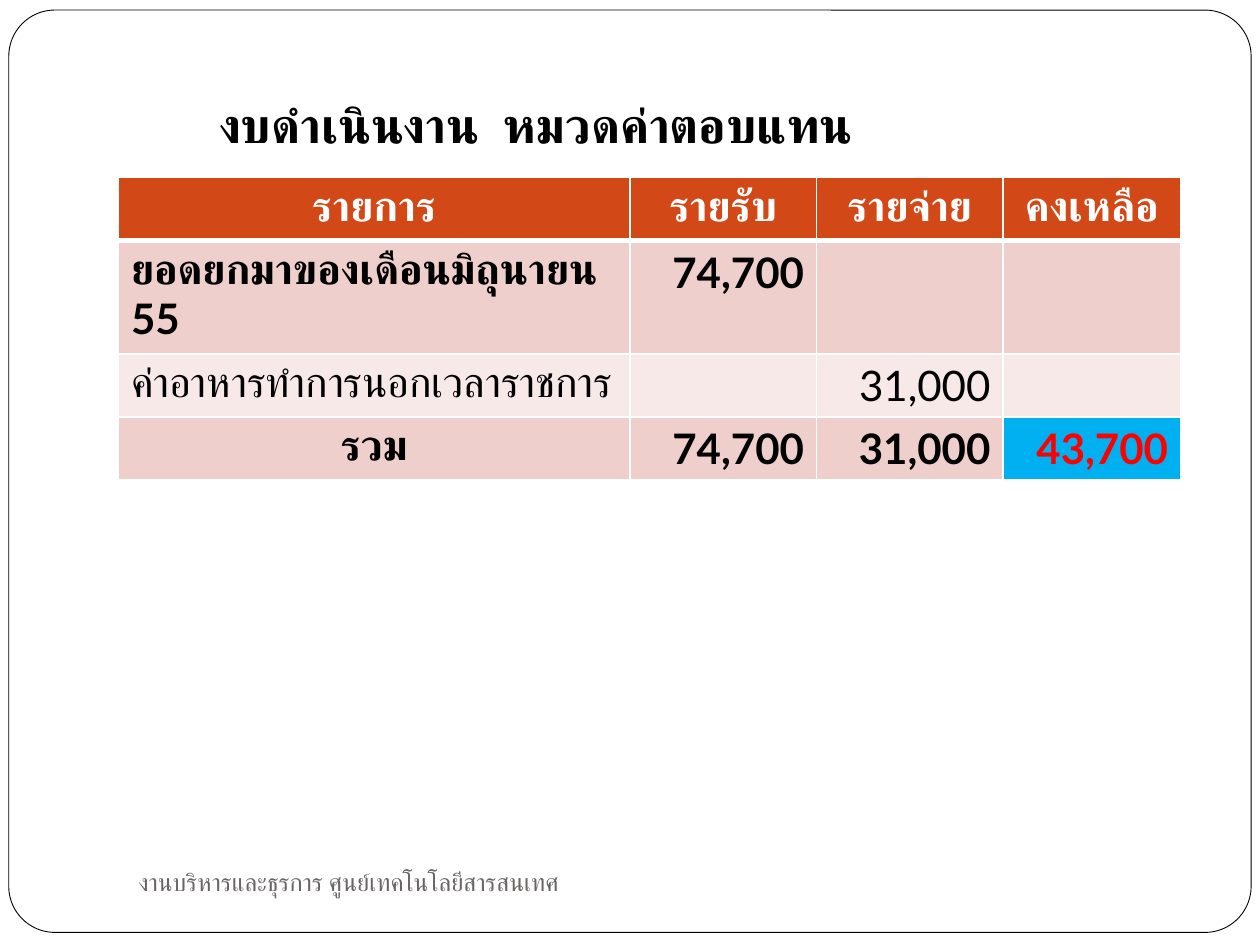
import pptx
import pptx.dml.color
import pptx.enum.shapes
import pptx.enum.text
import pptx.oxml
import pptx.oxml.ns
import pptx.util

COLORS = {
    "white": "FFFFFF", "black": "000000", "footer": "696464",
    "header": "D34817", "band": "EFCFCC", "light": "F7E9E8",
    "balance": "00B0F0", "red": "FF0000",
}
ALIGNMENTS = {
    "left": pptx.enum.text.PP_ALIGN.LEFT,
    "center": pptx.enum.text.PP_ALIGN.CENTER,
    "right": pptx.enum.text.PP_ALIGN.RIGHT,
}
THAI_FONT = "Times New Roman"


def rgb(name):
    return pptx.dml.color.RGBColor.from_string(COLORS[name])


def write_text(text_frame, text, size=24, font="Lato", color="black",
               bold=False, align="left"):
    paragraph = text_frame.paragraphs[0]
    paragraph.alignment = ALIGNMENTS[align]
    run = paragraph.add_run()
    run.text = text
    run.font.size = pptx.util.Pt(size)
    run.font.name = font
    run.font.bold = bold
    run.font.color.rgb = rgb(color)
    # Thai letters take the complex-script font
    complex_font = pptx.oxml.parse_xml(
        f'<a:cs {pptx.oxml.ns.nsdecls("a")} typeface="{THAI_FONT}"/>')
    run.font._element.append(complex_font)


class BudgetSlide:
    """Places elements on a grid of 100 columns by 75 rows."""

    def __init__(self, presentation):
        self.column = presentation.slide_width / 100
        self.row = presentation.slide_height / 75
        self.slide = presentation.slides.add_slide(presentation.slide_layouts[6])

    def columns(self, count):
        return pptx.util.Emu(round(count * self.column))

    def rows(self, count):
        return pptx.util.Emu(round(count * self.row))

    def place(self, left, top, width, height):
        return (self.columns(left), self.rows(top),
                self.columns(width), self.rows(height))

    def frame(self, *area):
        shape = self.slide.shapes.add_shape(
            pptx.enum.shapes.MSO_SHAPE.ROUNDED_RECTANGLE, *self.place(*area))
        shape.adjustments[0] = 0.05
        shape.shadow.inherit = False
        shape.fill.solid()
        shape.fill.fore_color.rgb = rgb("white")
        shape.line.color.rgb = rgb("black")
        shape.line.width = pptx.util.Pt(0.5)

    def text(self, text, *area, middle=False, **style):
        text_frame = self.slide.shapes.add_textbox(*self.place(*area)).text_frame
        text_frame.word_wrap = True
        if middle:
            text_frame.vertical_anchor = pptx.enum.text.MSO_ANCHOR.MIDDLE
        write_text(text_frame, text, **style)

    def table(self, left, top, widths, heights, content):
        area = self.place(left, top, sum(widths), sum(heights))
        table = self.slide.shapes.add_table(len(heights), len(widths), *area).table
        for column, width in zip(table.columns, widths):
            column.width = self.columns(width)
        for row, height in zip(table.rows, heights):
            row.height = self.rows(height)
        for row_index, (fill, style, texts) in enumerate(content):
            for column_index, text in enumerate(texts):
                cell = table.cell(row_index, column_index)
                self.cell(cell, text, fill, row_index, column_index, style)
        return table

    def cell(self, cell, text, fill, row_index, column_index, style):
        # The line under the header is thicker
        self.borders(cell, top=3 if row_index == 1 else 1,
                     bottom=3 if row_index == 0 else 1)
        self.fill_cell(cell, fill)
        if text:
            default = "right" if column_index else "left"
            if row_index == 0 or text == "รวม":
                default = "center"
            write_text(cell.text_frame, text, align=default,
                       **(TOTAL if text == "43,700" else style))

    def fill_cell(self, cell, color):
        cell.fill.solid()
        cell.fill.fore_color.rgb = rgb(color)

    def borders(self, cell, top, bottom):
        properties = cell._tc.get_or_add_tcPr()
        for side, width in (("L", 1), ("R", 1), ("T", top), ("B", bottom)):
            properties.append(pptx.oxml.parse_xml(
                f'<a:ln{side} {pptx.oxml.ns.nsdecls("a")} w="{pptx.util.Pt(width)}">'
                f'<a:solidFill><a:srgbClr val="{COLORS["white"]}"/></a:solidFill>'
                f'</a:ln{side}>'))


HEADER = {"color": "white", "bold": True}
STRONG = {"bold": True}
TOTAL = {"color": "red", "bold": True}
BUDGET = [
    ("header", HEADER, ["รายการ", "รายรับ", "รายจ่าย", "คงเหลือ"]),
    ("band", STRONG, ["ยอดยกมาของเดือนมิถุนายน 55", "74,700", "", ""]),
    ("light", {}, ["ค่าอาหารทำการนอกเวลาราชการ", "", "31,000", ""]),
    ("band", STRONG, ["รวม", "74,700", "31,000", "43,700"]),
]


def main():
    presentation = pptx.Presentation()
    presentation.slide_width = pptx.util.Inches(10)
    presentation.slide_height = pptx.util.Inches(7.5)
    budget = BudgetSlide(presentation)

    # Rounded page frame
    budget.frame(0.7, 0.8, 98.6, 73.2)

    # Footer and title
    budget.text("งานบริหารและธุรการ ศูนย์เทคโนโลยีสารสนเทศ", 10, 67.5, 43.3, 5,
                middle=True, size=14, font=THAI_FONT, color="footer")
    budget.text("งบดำเนินงาน  หมวดค่าตอบแทน", 16.4, 7, 59.4, 5.7,
                size=28, bold=True)

    # Budget table with the remaining balance marked
    table = budget.table(9.4, 14.1, [40.6, 14.8, 14.8, 14.1],
                         [4.9, 9, 5, 5], BUDGET)
    budget.fill_cell(table.cell(3, 3), "balance")

    presentation.save("out.pptx")


if __name__ == "__main__":
    main()
